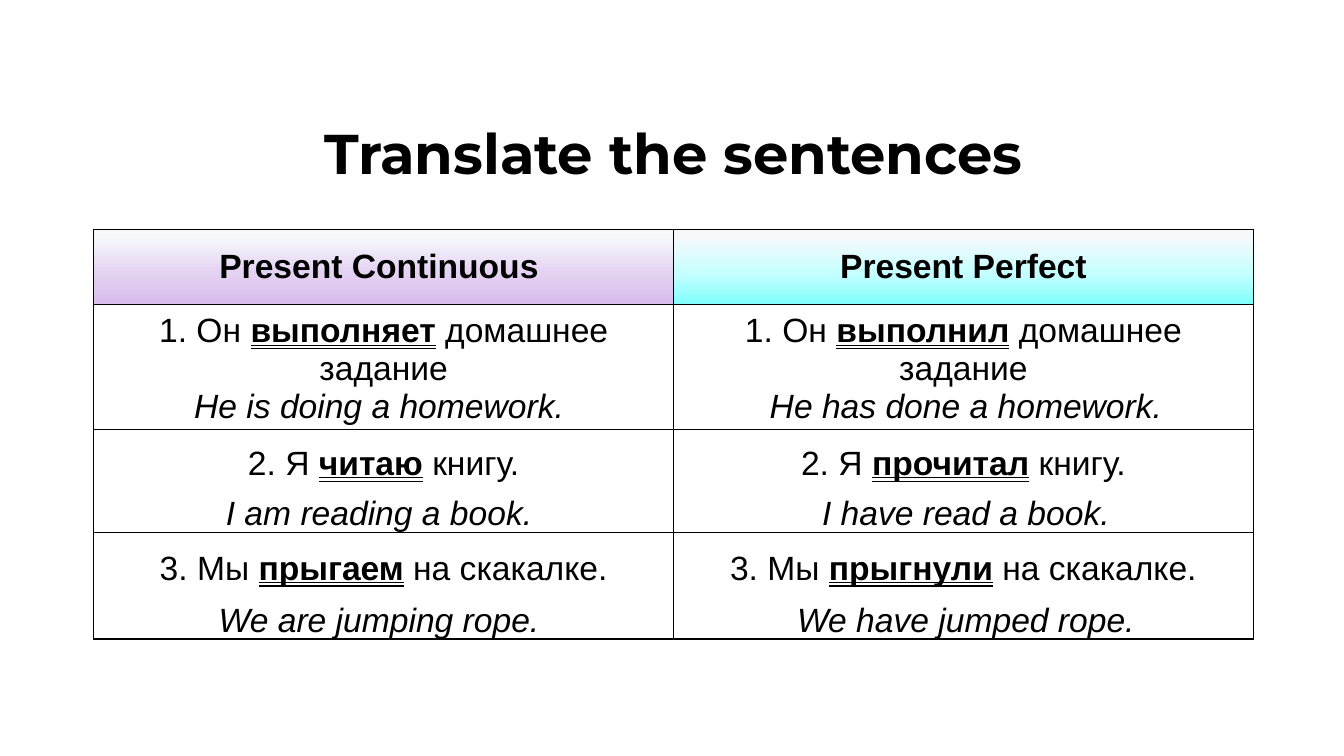
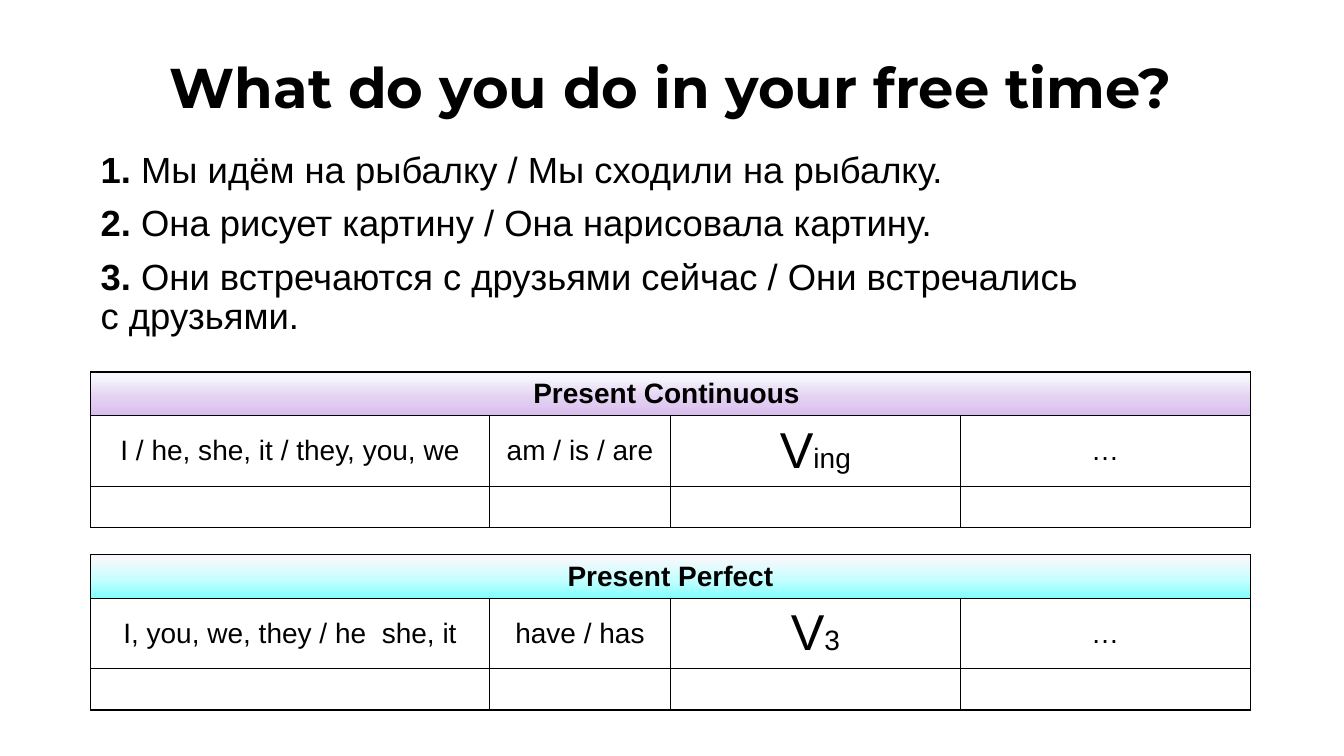
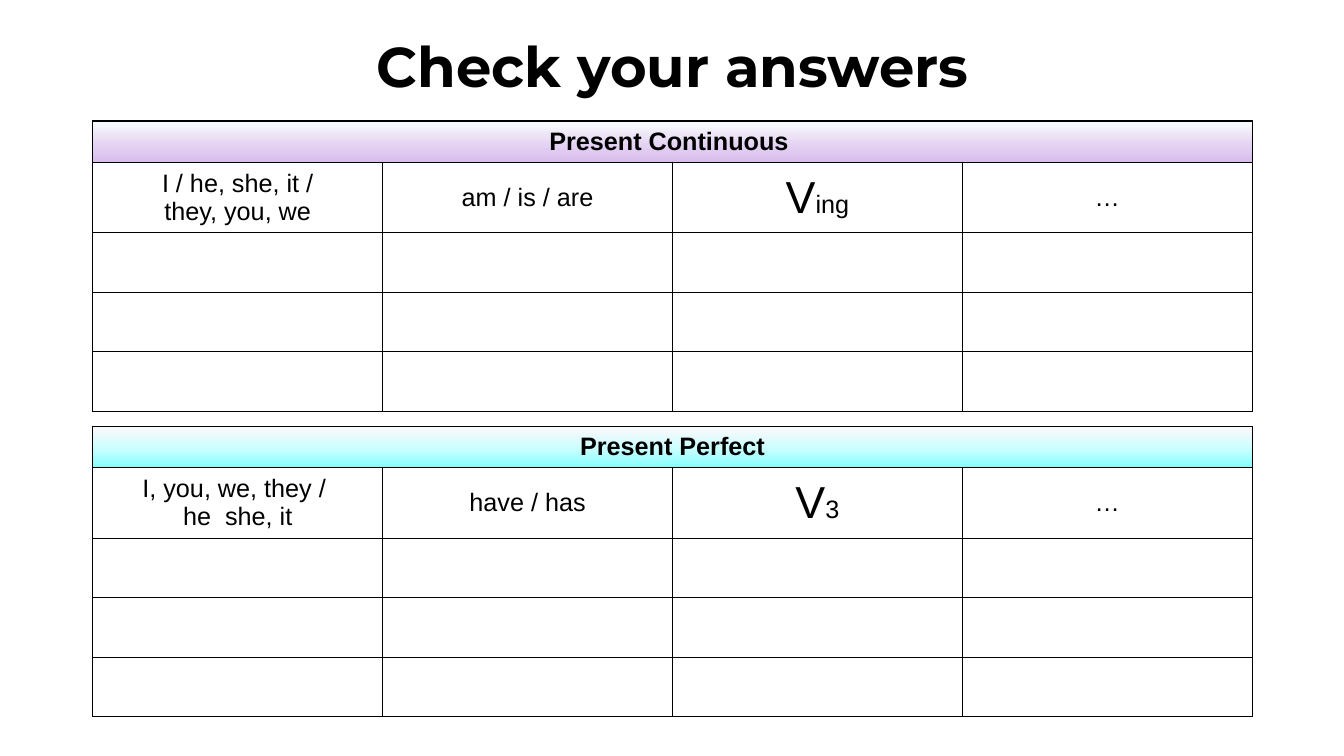
from lxml import etree
from pptx import Presentation
from pptx.dml.color import RGBColor
from pptx.enum.text import MSO_ANCHOR as Anchor, MSO_UNDERLINE as Underline, PP_ALIGN as Align
from pptx.oxml import parse_xml
from pptx.oxml.ns import nsdecls
from pptx.util import Inches, Pt

BLACK = RGBColor(0x00, 0x00, 0x00)
WHITE = RGBColor(0xFF, 0xFF, 0xFF)
MIST = RGBColor(0xF6, 0xF8, 0xFC)
LILAC = (RGBColor(0xE4, 0xD2, 0xF2), RGBColor(0xD8, 0xBD, 0xED))
AQUA = (RGBColor(0xC5, 0xFF, 0xFF), RGBColor(0x81, 0xFF, 0xFC))
STOPS = (10, 58, 100)

TITLE_FONT, BODY_FONT = "Montserrat", "Arial"
CONTENT_WIDTH = 11.5
BOLD = {"bold": True}
ITALIC = {"italic": True}
VERB = {"bold": True, "underline": Underline.DOUBLE_LINE}


def write(frame, lines, size, align=Align.CENTER, font=BODY_FONT):
    """Fill a frame with lines, each a list of (text, font settings) runs."""
    frame.word_wrap = True
    for number, runs in enumerate(lines):
        para = frame.add_paragraph() if number else frame.paragraphs[0]
        para.alignment = align
        for text, settings in runs:
            for part_number, part in enumerate(text.split("\n")):
                if part_number:
                    para.add_line_break()
                span = para.add_run()
                span.text = part
                look = {"name": font, "size": Pt(size), "bold": False, **settings}
                for key, value in look.items():
                    setattr(span.font, key, value)
                span.font.color.rgb = BLACK


def add_grid(slide, left, top, columns, heights, rows, headings, size):
    """Add a bordered table; rows hold runs per cell, headings are (text, tint)."""
    frame = slide.shapes.add_table(
        len(heights), len(columns), Inches(left), Inches(top),
        Inches(CONTENT_WIDTH), Inches(sum(heights)))
    table = frame.table
    table.first_row = table.horz_banding = False
    for column, share in zip(table.columns, columns):
        column.width = Inches(CONTENT_WIDTH * share)
    for row, height in zip(table.rows, heights):
        row.height = Inches(height)
    if len(headings) == 1:
        table.cell(0, 0).merge(table.cell(0, len(columns) - 1))

    content = [[[(text, BOLD)] for text, tint in headings]] + rows
    for row_number in range(len(heights)):
        for column_number in range(len(columns)):
            cell = table.cell(row_number, column_number)
            cell.vertical_anchor = Anchor.MIDDLE
            if row_number < len(content) and column_number < len(content[row_number]):
                write(cell.text_frame, [content[row_number][column_number]], size)
            properties = cell._tc.get_or_add_tcPr()
            if row_number == 0:
                tint = headings[min(column_number, len(headings) - 1)][1]
                stops = "".join(
                    f'<a:gs pos="{stop * 1000}"><a:srgbClr val="{color}"/></a:gs>'
                    for stop, color in zip(STOPS, (MIST, *tint)))
                properties.append(parse_xml(
                    f'<a:gradFill {nsdecls("a")}><a:gsLst>{stops}</a:gsLst>'
                    '<a:lin ang="5400000" scaled="0"/></a:gradFill>'))
            else:
                cell.fill.solid()
                cell.fill.fore_color.rgb = WHITE
            for position, side in enumerate("LRTB"):
                properties.insert(position, parse_xml(
                    f'<a:ln{side} {nsdecls("a")} w="{Pt(1)}"><a:solidFill>'
                    f'<a:srgbClr val="{BLACK}"/></a:solidFill></a:ln{side}>'))
    return table


deck = Presentation()
deck.slide_width, deck.slide_height = Inches(13.33), Inches(7.5)

# Slides with their titles: text, left, top, height
titles = [
    ("Translate the sentences", 0.93, 0.83, 1.45),
    ("What do you do in your free time?", 0.9, 0.34, 1.12),
    ("Check your answers", 0.92, 0.22, 0.93),
]
for title, left, top, height in titles:
    page = deck.slides.add_slide(deck.slide_layouts[6])
    box = page.shapes.add_textbox(
        Inches(left), Inches(top), Inches(CONTENT_WIDTH), Inches(height))
    box.text_frame.vertical_anchor = Anchor.MIDDLE
    write(box.text_frame, [[(title, BOLD)]], 40, font=TITLE_FONT)
    box.text_frame.paragraphs[0].line_spacing = 0.9
translate, free_time, answers = deck.slides

continuous = ("Present Continuous ", LILAC)
perfect = ("Present Perfect", AQUA)

# Sentences to translate, with the answers in the lower part of each cell
sentences = [
    ("1. Он ", "выполняет", "выполнил", " домашнее задание"),
    ("2. Я ", "читаю", "прочитал", " книгу."),
    ("3. Мы ", "прыгаем", "прыгнули", " на скакалке."),
]
sentence_rows = [
    [[(start, {}), (verb, VERB), (end, {})] for verb in verbs]
    for start, *verbs, end in sentences
]
table = add_grid(translate, 0.93, 2.28, (1 / 2, 1 / 2), (0.74, 1.21, 1.02, 1.06),
                 sentence_rows, (continuous, perfect), 24)
for row_number in range(1, 4):
    for column_number in range(2):
        table.cell(row_number, column_number).margin_bottom = Inches(0.39)

translations = [
    (3.76, ("He is doing a homework.", "I am reading a book.", "We are jumping rope.")),
    (9.58, ("He has done a homework.", "I have read a book.", "We have jumped rope.")),
]
caption_width = 4.4
for center, captions in translations:
    for number, caption in enumerate(captions):
        box = translate.shapes.add_textbox(
            Inches(center - caption_width / 2), Inches(3.77 + 1.06 * number),
            Inches(caption_width), Inches(0.5))
        write(box.text_frame, [[(caption, ITALIC)]], 24)

# Free-time sentences
box = free_time.shapes.add_textbox(
    Inches(0.9), Inches(1.46), Inches(CONTENT_WIDTH), Inches(2.14))
write(box.text_frame, [
    [("1. ", BOLD), ("Мы идём на рыбалку / Мы сходили на рыбалку.", {})],
    [("2.", BOLD), (" Она рисует картину / Она нарисовала картину.", {})],
    [("3.", BOLD), (" Они встречаются с друзьями сейчас / Они встречались \nс друзьями.", {})],
], 26, Align.LEFT)
for number, para in enumerate(box.text_frame.paragraphs):
    para.line_spacing = 0.9
    if number:
        para.space_before = Pt(10)

# Sentence patterns: heading, subjects on one line and on two, auxiliary, verb ending
patterns = [
    (continuous, "I / he, she, it / they, you, we", "I / he, she, it /\nthey, you, we",
     "am / is / are", "ing"),
    (perfect, "I, you, we, they / he  she, it", "I, you, we, they / \nhe  she, it",
     "have / has", "3"),
]
practice_columns = (0.344, 0.156, 0.25, 0.25)
for number, (heading, subjects, split_subjects, auxiliary, ending) in enumerate(patterns):
    for page, left, top, columns, heights, subject, size, verb_size in (
        (free_time, 0.9, 3.69 + 1.81 * number, practice_columns,
         (0.41, 0.66, 0.41), subjects, 20, 36),
        (answers, 0.92, 1.2 + 3.03 * number, (1 / 4,) * 4,
         (0.41, 0.66, 0.59, 0.59, 0.59), split_subjects, 18, 32),
    ):
        pattern = [
            [(subject, {})],
            [(auxiliary, {})],
            [("V", {"size": Pt(verb_size)}), (ending, {})],
            [("…", {})],
        ]
        add_grid(page, left, top, columns, heights, [pattern], [heading], size)

deck.save("out.pptx")
